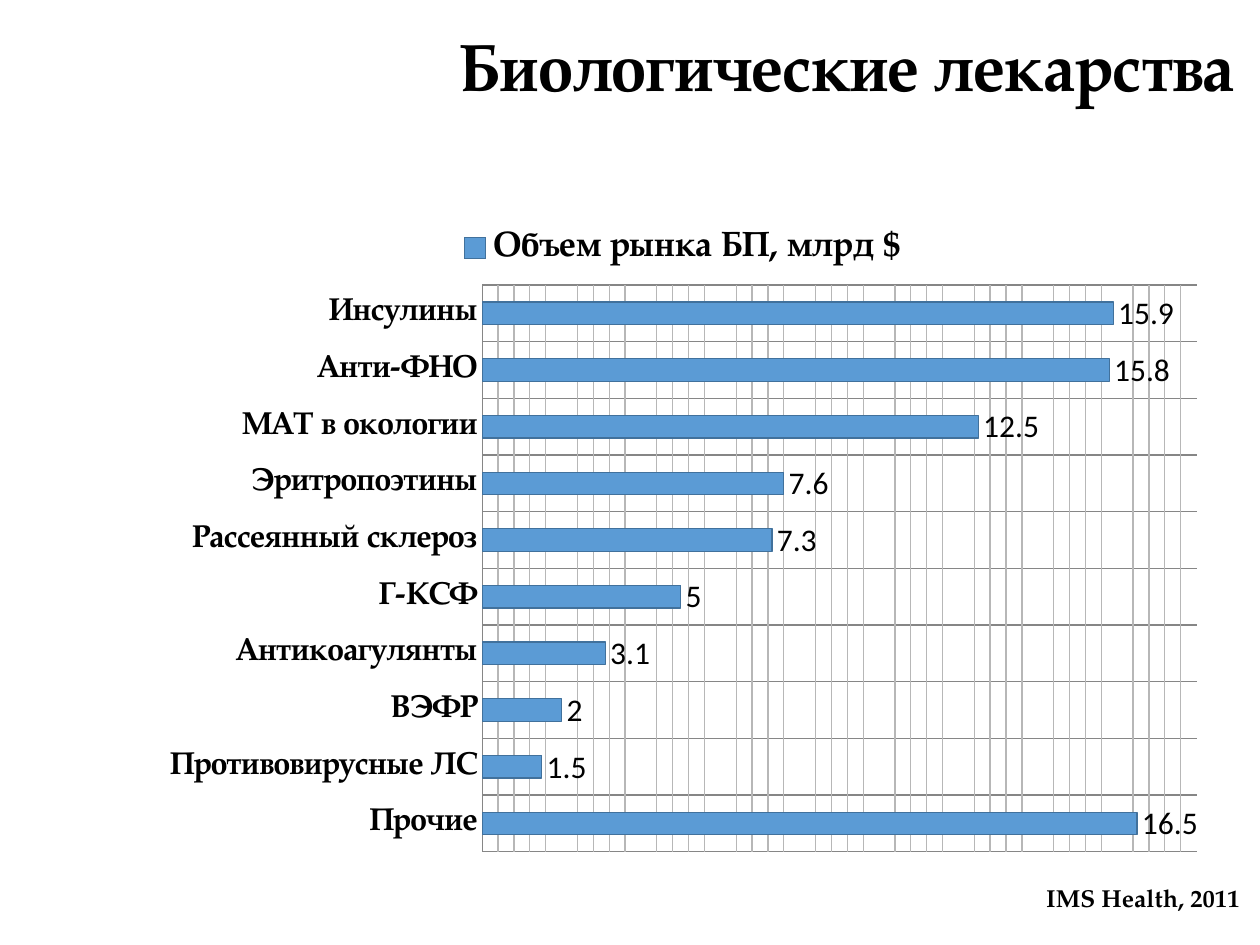
from dataclasses import dataclass

from lxml import etree
from pptx import Presentation
from pptx.chart.data import CategoryChartData
from pptx.dml.color import RGBColor
from pptx.enum.chart import XL_CHART_TYPE, XL_LABEL_POSITION, XL_LEGEND_POSITION, XL_TICK_MARK
from pptx.enum.text import MSO_AUTO_SIZE, PP_ALIGN
from pptx.oxml.ns import qn
from pptx.util import Emu, Pt

BAR = XL_CHART_TYPE.BAR_CLUSTERED
TOP = XL_LEGEND_POSITION.TOP
OUTSIDE = XL_LABEL_POSITION.OUTSIDE_END
NO_TICK = XL_TICK_MARK.NONE
RIGHT = PP_ALIGN.RIGHT
GROW = MSO_AUTO_SIZE.SHAPE_TO_FIT_TEXT
SCALE = 914400 // 126


@dataclass(frozen=True)
class Theme:
    """Colours, fonts and type sizes of the slide."""
    serif: str = "TeX Gyre Pagella"
    sans: str = "Calibri"
    text: RGBColor = RGBColor(0, 0, 0)
    bar: RGBColor = RGBColor(0x5B, 0x9B, 0xD5)
    outline: RGBColor = RGBColor(0x41, 0x71, 0x9C)
    axis: RGBColor = RGBColor(0x86, 0x86, 0x86)
    grid: RGBColor = RGBColor(0xB7, 0xB7, 0xB7)
    title: int = 38
    legend: int = 20
    chart: int = 18
    source: int = 14


THEME = Theme()
SERIES = "Объем рынка БП, млрд $"
MARKET = {
    "Прочие": 16.5,
    "Противовирусные ЛС": 1.5,
    "ВЭФР": 2,
    "Антикоагулянты": 3.1,
    "Г-КСФ": 5,
    "Рассеянный склероз": 7.3,
    "Эритропоэтины": 7.6,
    "МАТ в окологии": 12.5,
    "Анти-ФНО": 15.8,
    "Инсулины": 15.9,
}


def px(n):
    """Turn whole pixels into EMU."""
    return Emu(n * SCALE)


def set_font(font, name, size, bold=False):
    """Set face, size, weight and text colour."""
    font.name, font.size, font.bold = name, Pt(size), bold
    font.color.rgb = THEME.text


def set_line(line, color):
    """Draw a thin line in one colour."""
    line.color.rgb = color
    line.width = Pt(0.75)


def set_minor_grid(axis, color):
    """Show minor gridlines as thin lines in one colour."""
    axis.has_minor_gridlines = True
    node = axis._element.find(qn("c:minorGridlines"))
    for tag in ("c:spPr", "a:ln", "a:solidFill", "a:srgbClr"):
        node = etree.SubElement(node, qn(tag))
        if tag == "a:ln":
            node.set("w", str(Pt(0.75)))
    node.set("val", str(color))


def add_right_text(s, box, text, size, margins):
    """Add a bold, right-aligned line of text with the given insets."""
    tf = s.shapes.add_textbox(*map(px, box)).text_frame
    tf.word_wrap = True
    tf.auto_size = GROW
    tf.margin_left, tf.margin_top, tf.margin_right, tf.margin_bottom = map(px, margins)
    tf.text = text
    p = tf.paragraphs[0]
    p.alignment = RIGHT
    set_font(p.runs[0].font, THEME.serif, size, True)


def set_plot_box(chart, box, plot):
    """Fix the inner plot area, given in pixels within the chart box."""
    area = chart.plots[0]._element.getparent()
    for old in area.findall(qn("c:layout")):
        area.remove(old)
    layout = etree.Element(qn("c:layout"))
    area.insert(0, layout)
    manual = etree.SubElement(layout, qn("c:manualLayout"))
    shares = [n / full for n, full in zip(plot, box[2:] * 2)]
    values = [("layoutTarget", "inner"), ("xMode", "edge"), ("yMode", "edge")]
    values += [(tag, f"{share:.3f}") for tag, share in zip("xywh", shares)]
    for tag, value in values:
        etree.SubElement(manual, qn(f"c:{tag}")).set("val", value)


def add_market_chart(s, box):
    """Add the bar chart of market volume by drug group."""
    data = CategoryChartData()
    data.categories = list(MARKET)
    data.add_series(SERIES, list(MARKET.values()))
    chart = s.shapes.add_chart(BAR, *map(px, box), data).chart
    set_font(chart.font, THEME.sans, THEME.chart)
    chart.has_title = False
    chart.has_legend = True
    chart.legend.position = TOP
    chart.legend.include_in_layout = False
    set_font(chart.legend.font, THEME.serif, THEME.legend, True)

    cat = chart.category_axis
    cat.major_tick_mark = cat.minor_tick_mark = NO_TICK
    cat.has_major_gridlines = True
    set_line(cat.major_gridlines.format.line, THEME.axis)
    set_line(cat.format.line, THEME.axis)
    set_font(cat.tick_labels.font, THEME.serif, THEME.chart, True)

    val = chart.value_axis
    val.minimum_scale, val.maximum_scale = 0, 18
    val.major_unit, val.minor_unit = 2, 0.4
    val.has_major_gridlines = False
    set_minor_grid(val, THEME.grid)
    val.visible = False

    plot = chart.plots[0]
    plot.vary_by_categories = False
    plot.gap_width, plot.overlap = 150, -25
    plot.has_data_labels = True
    labels = plot.data_labels
    labels.show_value = True
    labels.position = OUTSIDE
    set_font(labels.font, THEME.sans, THEME.chart)
    bars = plot.series[0].format
    bars.fill.solid()
    bars.fill.fore_color.rgb = THEME.bar
    set_line(bars.line, THEME.outline)
    set_plot_box(chart, box, (333, 70, 714, 567))


def main():
    """Build the slide and save it."""
    prs = Presentation()
    prs.slide_width, prs.slide_height = px(1260), px(945)
    s = prs.slides.add_slide(prs.slide_layouts[6])
    add_right_text(s, (0, 0, 1260, 112), "Биологические лекарства", THEME.title, (25, 25, 25, 6))
    add_right_text(s, (629, 877, 630, 43), "IMS Health, 2011 ", THEME.source, (13, 6, 13, 6))
    add_market_chart(s, (149, 215, 1068, 650))
    prs.save("out.pptx")


if __name__ == "__main__":
    main()
